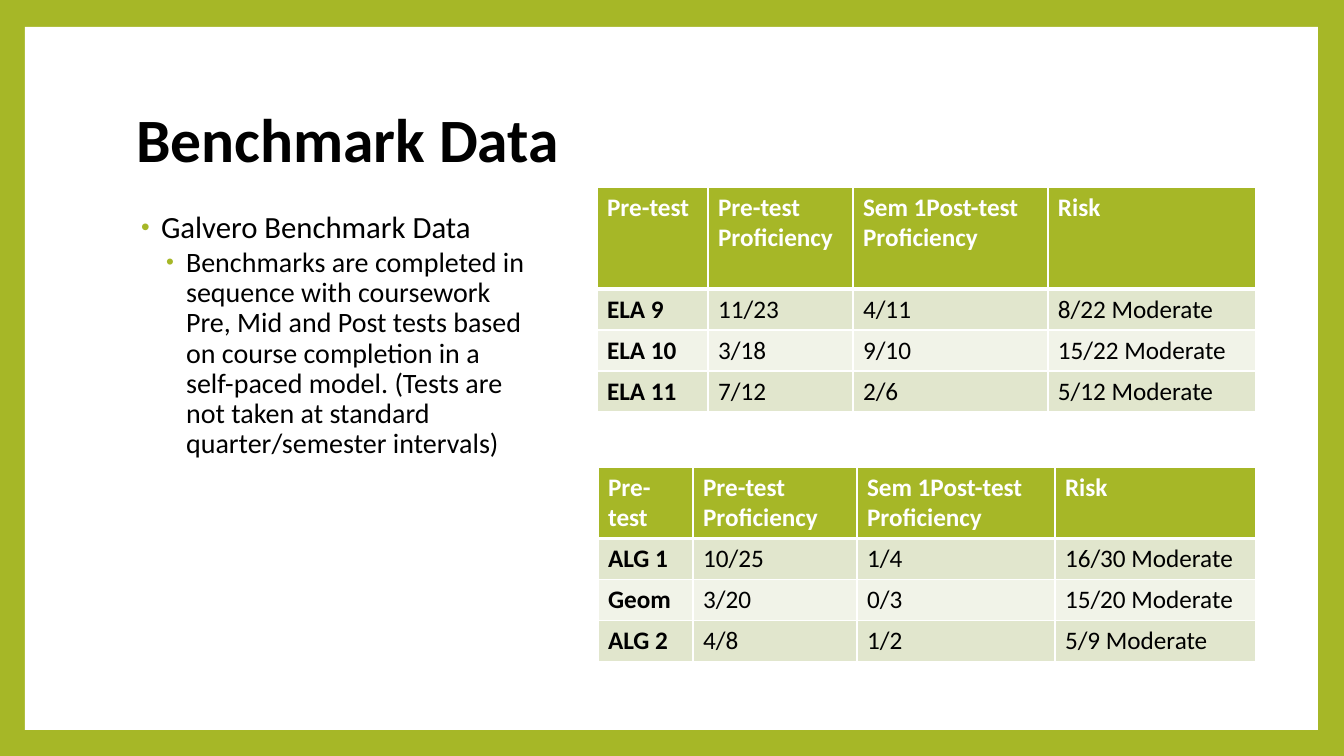
import pptx
import pptx.dml.color
import pptx.enum.shapes
import pptx.enum.text
import pptx.oxml
import pptx.oxml.ns
import pptx.util

SLIDE_WIDTH, SLIDE_HEIGHT = 1344, 756
EMU_PER_PX = 12192000 / SLIDE_WIDTH
FONT = "Calibri"
GREEN, WHITE, BLACK = "A6B727", "FFFFFF", "000000"
BAND_COLORS = ["E1E6CD", "F1F3E8"]
ROW_HEIGHT = 41

HEADERS = ["Pre-test", "Pre-test Proficiency", "Sem 1Post-test Proficiency", "Risk"]
ELA_ROWS = [
    ["ELA 9", "11/23", "4/11", "8/22 Moderate"],
    ["ELA 10", "3/18", "9/10", "15/22 Moderate"],
    ["ELA 11", "7/12", "2/6", "5/12 Moderate"],
]
MATH_ROWS = [
    ["ALG 1", "10/25", "1/4", "16/30 Moderate"],
    ["Geom", "3/20", "0/3", "15/20 Moderate"],
    ["ALG 2", "4/8", "1/2", "5/9 Moderate"],
]
BULLETS = [
    dict(text="Galvero Benchmark Data", level=0, size=22, before=14, after=0, margin=25),
    dict(
        text="Benchmarks are completed in sequence with coursework Pre, Mid and Post tests "
        "based on course completion in a self-paced model. (Tests are not taken at "
        "standard quarter/semester intervals)",
        level=1, size=20, before=2, after=4, margin=50,
    ),
]


def px(length):
    return pptx.util.Emu(round(length * EMU_PER_PX))


def rgb(color):
    return pptx.dml.color.RGBColor.from_string(color)


def fill_solid(fill, color):
    fill.solid()
    fill.fore_color.rgb = rgb(color)


def place(shape, left, top, width, height):
    shape.left, shape.top = px(left), px(top)
    shape.width, shape.height = px(width), px(height)


def write(paragraph, text, size=18, color=BLACK, bold=False, spacing=None):
    run = paragraph.add_run()
    run.text = text
    run.font.name = FONT
    run.font.size = pptx.util.Pt(size)
    run.font.bold = bold
    run.font.color.rgb = rgb(color)
    paragraph.alignment = pptx.enum.text.PP_ALIGN.LEFT
    if spacing:
        paragraph.line_spacing = spacing


def append_xml(parent, xml):
    name, rest = xml[1:].split(" ", 1)
    element = pptx.oxml.parse_xml(f"<{name} {pptx.oxml.ns.nsdecls('a')} {rest}")
    parent.append(element)
    return element


def set_bullet(paragraph, margin, hanging=20):
    properties = paragraph._p.get_or_add_pPr()
    properties.set("marL", str(px(margin)))
    properties.set("indent", str(-px(hanging)))
    append_xml(properties, f'<a:buClr ><a:srgbClr val="{GREEN}"/></a:buClr>')
    append_xml(properties, '<a:buSzPct val="80000"/>')
    append_xml(properties, '<a:buFont typeface="Arial"/>')
    append_xml(properties, '<a:buChar char="•"/>')


def set_borders(cell, top, bottom):
    """Draw white borders, one point at the sides; they precede the fill in the XML."""
    properties = cell._tc.get_or_add_tcPr()
    widths = {"lnL": 1, "lnR": 1, "lnT": top, "lnB": bottom}
    for index, (side, width) in enumerate(widths.items()):
        line = append_xml(
            properties,
            f'<a:{side} w="{pptx.util.Pt(width)}"><a:solidFill>'
            f'<a:srgbClr val="{WHITE}"/></a:solidFill></a:{side}>',
        )
        properties.insert(index, line)


def draw_frame(slide, left, top, width, height):
    fill_solid(slide.background.fill, GREEN)
    panel = slide.shapes.add_shape(
        pptx.enum.shapes.MSO_SHAPE.RECTANGLE, px(left), px(top), px(width), px(height)
    )
    panel.shadow.inherit = False
    fill_solid(panel.fill, WHITE)
    panel.line.fill.background()
    slide.shapes.title.element.addprevious(panel.element)


def fill_title(title, left, top, width, height):
    place(title, left, top, width, height)
    frame = title.text_frame
    frame.auto_size = pptx.enum.text.MSO_AUTO_SIZE.NONE
    frame.vertical_anchor = pptx.enum.text.MSO_ANCHOR.MIDDLE
    write(frame.paragraphs[0], "Benchmark Data", size=44, bold=True, spacing=0.9)


def fill_body(body, left, top, width, height):
    place(body, left, top, width, height)
    frame = body.text_frame
    frame.auto_size = pptx.enum.text.MSO_AUTO_SIZE.NONE
    frame.vertical_anchor = pptx.enum.text.MSO_ANCHOR.TOP
    for index, item in enumerate(BULLETS):
        paragraph = frame.add_paragraph() if index else frame.paragraphs[0]
        paragraph.level = item["level"]
        write(paragraph, item["text"], size=item["size"], spacing=0.9)
        paragraph.space_before = pptx.util.Pt(item["before"])
        paragraph.space_after = pptx.util.Pt(item["after"])
        set_bullet(paragraph, item["margin"])


def draw_scores(slide, left, top, column_widths, header_height, rows):
    height = header_height + ROW_HEIGHT * len(rows)
    table = slide.shapes.add_table(
        len(rows) + 1, len(HEADERS),
        px(left), px(top), px(sum(column_widths)), px(height),
    ).table
    table.horz_banding = False
    for column, width in zip(table.columns, column_widths):
        column.width = px(width)
    for row_index, values in enumerate([HEADERS] + rows):
        is_header = row_index == 0
        table.rows[row_index].height = px(header_height if is_header else ROW_HEIGHT)
        for column_index, text in enumerate(values):
            cell = table.cell(row_index, column_index)
            fill_solid(cell.fill, GREEN if is_header else BAND_COLORS[(row_index - 1) % 2])
            set_borders(cell, top=3 if row_index == 1 else 1, bottom=3 if is_header else 1)
            write(
                cell.text_frame.paragraphs[0], text,
                color=WHITE if is_header else BLACK,
                bold=is_header or column_index == 0,
            )


def main():
    presentation = pptx.Presentation()
    presentation.slide_width, presentation.slide_height = px(SLIDE_WIDTH), px(SLIDE_HEIGHT)
    slide = presentation.slides.add_slide(presentation.slide_layouts[1])
    draw_frame(slide, 25, 27, 1293, 703)
    fill_title(slide.shapes.title, 126, 68, 1089, 149)
    fill_body(slide.placeholders[1], 126, 207, 416, 499)
    draw_scores(slide, 597, 187, [111, 145, 195, 208], 102, ELA_ROWS)
    draw_scores(slide, 598, 467, [95, 164, 198, 201], 71, MATH_ROWS)
    presentation.save("out.pptx")


if __name__ == "__main__":
    main()
